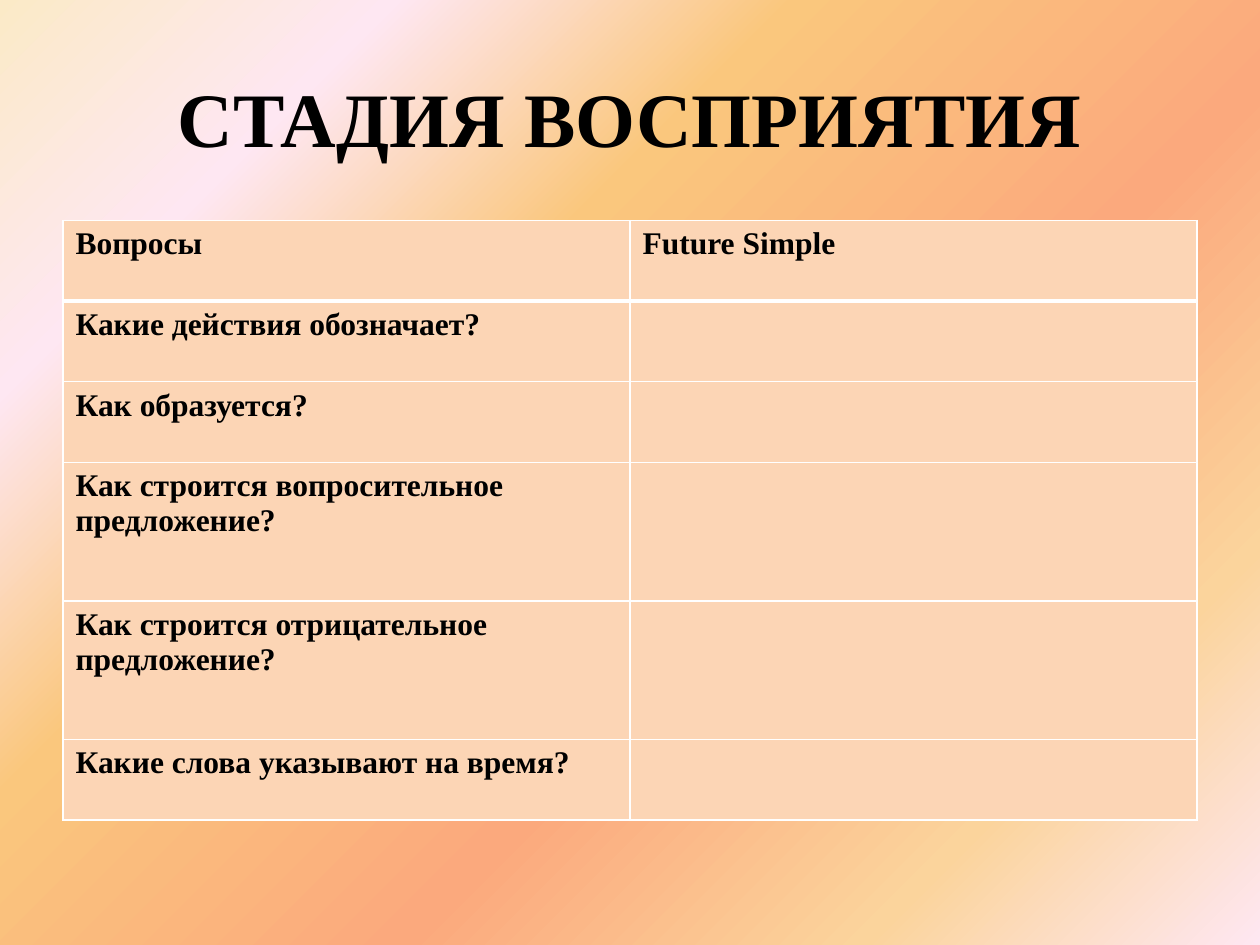
"""Build the slide with the question table for the perception stage."""
from lxml import etree
from pptx import Presentation
from pptx.dml.color import RGBColor
from pptx.enum import text
from pptx.oxml import ns
from pptx.util import Inches, Pt

FONT = "Times New Roman"
BLACK, WHITE, PEACH = "000000", "FFFFFF", "FCD5B5"
BACKGROUND = [(0, "FBEAC7"), (18, "FEE7F2"), (36, "FAC77D"),
              (61, "FBA97D"), (82, "FBD49C"), (100, "FEE7F2")]
TITLE = "СТАДИЯ ВОСПРИЯТИЯ"
ROWS = [
    (0.64, "Вопросы", "Future Simple"),
    (0.64, "Какие действия обозначает?", ""),
    (0.64, "Как образуется?", ""),
    (1.1, "Как строится вопросительное предложение?", ""),
    (1.1, "Как строится отрицательное предложение?", ""),
    (0.64, "Какие слова указывают на время?", ""),
]
LEFT, WIDTH = 0.5, 9


def color(value):
    return RGBColor.from_string(value)


def style(para, size):
    para.font.name = FONT
    para.font.size = Pt(size)
    para.font.bold = True
    para.font.color.rgb = color(BLACK)
    for span in para.runs:
        span.font.name = FONT
        span.font.size = Pt(size)
        span.font.bold = True
        span.font.color.rgb = color(BLACK)


def add_color(parent, value):
    etree.SubElement(parent, ns.qn("a:srgbClr"), val=value)


def paint_background(page):
    fill = page.background.fill
    fill.gradient()
    fill.gradient_angle = 315
    stops = page.element.find(".//" + ns.qn("a:gsLst"))
    for stop in list(stops):
        stops.remove(stop)
    for percent, value in BACKGROUND:
        stop = etree.SubElement(stops, ns.qn("a:gs"), pos=str(percent * 1000))
        add_color(stop, value)


def set_borders(cell, top, bottom):
    properties = cell._tc.get_or_add_tcPr()
    sides = [("L", 1), ("R", 1), ("T", top), ("B", bottom)]
    for index, (side, width) in enumerate(sides):
        line = etree.Element(ns.qn("a:ln" + side), w=str(Pt(width)))
        add_color(etree.SubElement(line, ns.qn("a:solidFill")), WHITE)
        properties.insert(index, line)


def add_title(page):
    box = page.shapes.add_textbox(Inches(LEFT), Inches(0.3), Inches(WIDTH), Inches(1.25))
    frame = box.text_frame
    frame.word_wrap = True
    frame.vertical_anchor = text.MSO_ANCHOR.MIDDLE
    frame.text = TITLE
    frame.paragraphs[0].alignment = text.PP_ALIGN.CENTER
    style(frame.paragraphs[0], 44)


def add_questions(page):
    height = sum(row[0] for row in ROWS)
    table = page.shapes.add_table(len(ROWS), 2, Inches(LEFT), Inches(1.75),
                                  Inches(WIDTH), Inches(height)).table
    table.first_row = True
    table.horz_banding = False
    for row, (row_height, *labels) in enumerate(ROWS):
        table.rows[row].height = Inches(row_height)
        for column, label in enumerate(labels):
            cell = table.cell(row, column)
            cell.text_frame.text = label
            style(cell.text_frame.paragraphs[0], 18)
            cell.fill.solid()
            cell.fill.fore_color.rgb = color(PEACH)
            set_borders(cell, 3 if row == 1 else 1, 3 if row == 0 else 1)


def main():
    deck = Presentation()
    deck.slide_width, deck.slide_height = Inches(10), Inches(7.5)
    page = deck.slides.add_slide(deck.slide_layouts[6])
    paint_background(page)
    add_title(page)
    add_questions(page)
    deck.save("out.pptx")


if __name__ == "__main__":
    main()
